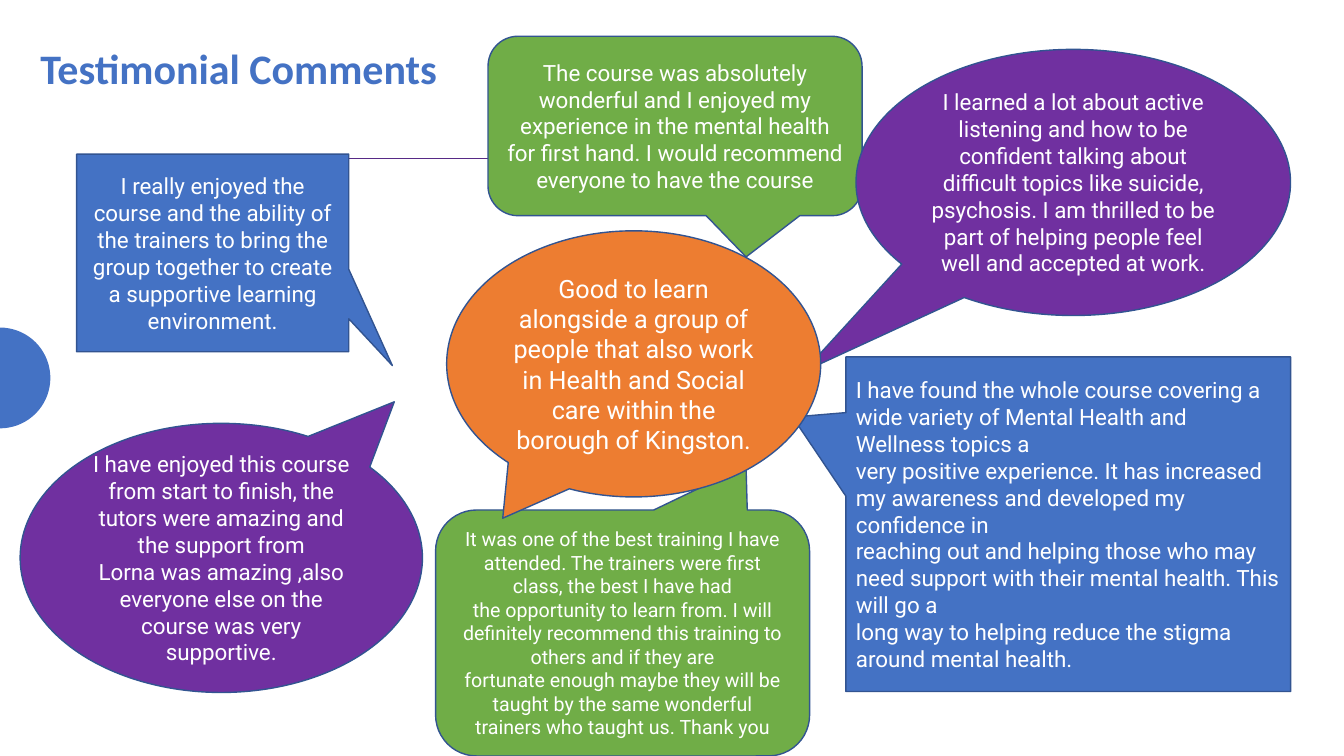
import math

from lxml import etree
from pptx import Presentation
from pptx import util as u
from pptx.dml.color import RGBColor
from pptx.enum import shapes, text
from pptx.oxml.ns import qn

BLUE = RGBColor(0x44, 0x72, 0xC4)
PURPLE = RGBColor(0x70, 0x30, 0xA0)
GREEN = RGBColor(0x70, 0xAD, 0x47)
ORANGE = RGBColor(0xED, 0x7D, 0x31)
OUTLINE = RGBColor(0x32, 0x54, 0x91)
RULE = RGBColor(0x57, 0x2A, 0x86)
WHITE = RGBColor(0xFF, 0xFF, 0xFF)

RECT = shapes.MSO_SHAPE.RECTANGULAR_CALLOUT
ROUNDED = shapes.MSO_SHAPE.ROUNDED_RECTANGULAR_CALLOUT
OVAL = shapes.MSO_SHAPE.OVAL_CALLOUT
CENTER = text.PP_ALIGN.CENTER
LEFT = text.PP_ALIGN.LEFT


class TestimonialSlide:
    heading_font = "Calibri"
    quote_font = "Roboto"

    def __init__(self, deck):
        self.slide = deck.slides.add_slide(deck.slide_layouts[5])

    def set_text(self, frame, lines, font, size, color, align, bold=False):
        frame.word_wrap = True
        frame.auto_size = text.MSO_AUTO_SIZE.NONE
        frame.vertical_anchor = text.MSO_ANCHOR.MIDDLE
        frame.text = "\n".join(lines)
        for paragraph in frame.paragraphs:
            paragraph.alignment = align
            paragraph.font.name = font
            paragraph.font.size = u.Pt(size)
            paragraph.font.bold = bold
            paragraph.font.color.rgb = color

    def title(self, box, heading):
        title = self.slide.shapes.title
        title.left, title.top, title.width, title.height = map(u.Inches, box)
        self.set_text(title.text_frame, [heading], self.heading_font, 30, BLUE, LEFT, True)
        title.text_frame.paragraphs[0].line_spacing = 0.9

    def half_disc(self, center_y, radius):
        """Half circle bulging from the left edge of the slide."""
        angles = [math.radians(a) for a in range(-90, 91, 5)]
        points = [(u.Inches(radius * math.cos(a)),
                   u.Inches(center_y + radius * math.sin(a))) for a in angles]
        builder = self.slide.shapes.build_freeform(*points[0])
        builder.add_line_segments(points[1:], close=True)
        disc = builder.convert_to_shape()
        disc.shadow.inherit = False
        disc.fill.solid()
        disc.fill.fore_color.rgb = BLUE
        disc.line.fill.background()

    def rule(self, left, right, y):
        rule = self.slide.shapes.add_connector(
            shapes.MSO_CONNECTOR.STRAIGHT, *map(u.Inches, (left, y, right, y)))
        rule.line.color.rgb = RULE
        rule.line.width = u.Pt(0.5)
        etree.SubElement(rule._element.spPr, qn("a:effectLst"))

    def bubble(self, kind, box, tail, fill, lines, size=16, align=CENTER):
        """Speech bubble; tail is the tip's offset from the centre, as a share of the size."""
        bubble = self.slide.shapes.add_shape(kind, *map(u.Inches, box))
        bubble.adjustments[0], bubble.adjustments[1] = tail
        bubble.shadow.inherit = False
        bubble.fill.solid()
        bubble.fill.fore_color.rgb = fill
        bubble.line.color.rgb = OUTLINE
        bubble.line.width = u.Pt(1)
        self.set_text(bubble.text_frame, lines, self.quote_font, size, WHITE, align)


def main():
    deck = Presentation()
    deck.slide_width, deck.slide_height = u.Inches(13.33), u.Inches(7.5)
    page = TestimonialSlide(deck)

    # Heading and background decoration
    page.half_disc(3.75, 0.5)
    page.rule(0.79, 11.71, 1.57)
    page.title((0.3, 0.21, 11.05, 0.98), "Testimonial Comments")

    # Left-hand comments
    page.bubble(RECT, (0.76, 1.53, 2.7, 1.96), (0.66, 0.57), BLUE, [
        "I really enjoyed the course and the ability of the trainers to bring "
        "the group together to create a supportive learning environment."])
    page.bubble(OVAL, (0.2, 4.2, 3.99, 2.67), (0.43, -0.58), PURPLE, [
        "I have enjoyed this course from start to finish, the tutors were "
        "amazing and the support from",
        "Lorna was amazing ,also everyone else on the course was very supportive."])

    # Bottom comment
    page.bubble(ROUNDED, (4.32, 5.06, 3.71, 2.44), (0.33, -0.68), GREEN, [
        "It was one of the best training I have attended. The trainers were "
        "first class, the best I have had",
        "the opportunity to learn from. I will definitely recommend this "
        "training to others and if they are",
        "fortunate enough maybe they will be taught by the same wonderful "
        "trainers who taught us. Thank you"], size=14)

    # Right-hand and top comments
    page.bubble(RECT, (8.39, 3.54, 4.41, 3.32), (-0.62, -0.32), BLUE, [
        "I have found the whole course covering a wide variety of Mental "
        "Health and Wellness topics a",
        "very positive experience. It has increased my awareness and "
        "developed my confidence in",
        "reaching out and helping those who may need support with their "
        "mental health. This will go a",
        "long way to helping reduce the stigma around mental health."], align=LEFT)
    page.bubble(ROUNDED, (4.84, 0.36, 3.71, 1.78), (0.19, 0.73), GREEN, [
        "The course was absolutely wonderful and I enjoyed my experience in the "
        "mental health for first hand. I would recommend everyone to have the course"])
    page.bubble(OVAL, (8.49, 0.49, 4.31, 2.64), (-0.62, 0.71), PURPLE, [
        "I learned a lot about active listening and how to be confident talking "
        "about difficult topics like suicide, psychosis. I am thrilled to be "
        "part of helping people feel well and accepted at work."])

    # Central comment
    page.bubble(OVAL, (4.43, 2.29, 3.71, 2.64), (-0.35, 0.58), ORANGE, [
        "Good to learn alongside a group of people that also work in Health "
        "and Social care within the",
        "borough of Kingston."], size=18)

    deck.save("out.pptx")


if __name__ == "__main__":
    main()
